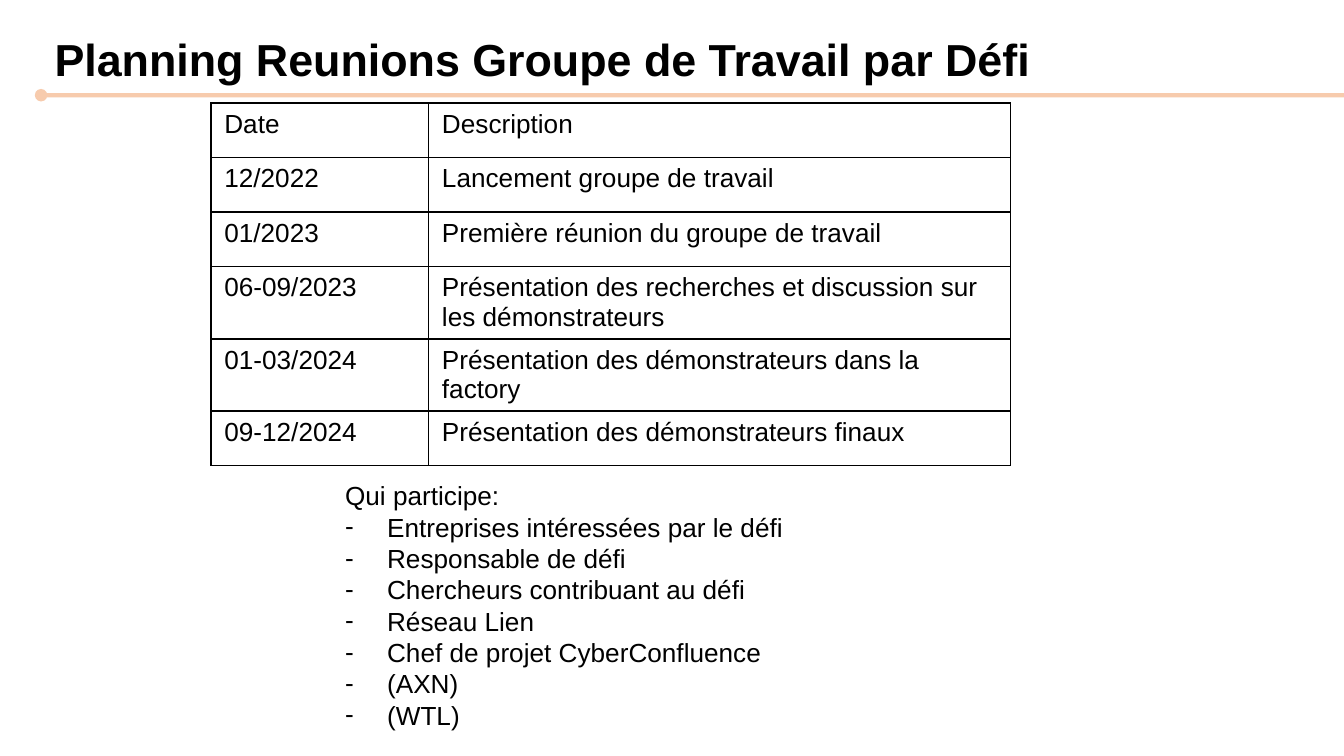
import dataclasses

import lxml.etree
import pptx
import pptx.dml.color
import pptx.enum.shapes
import pptx.enum.text
import pptx.oxml.ns
import pptx.util

Pt = pptx.util.Pt
qn = pptx.oxml.ns.qn

COLORS = {"ink": "000000", "rule": "EB7E33"}
FONT = "Arial"
BODY = 14


@dataclasses.dataclass
class Meeting:
    date: str
    text: str


MEETINGS = [
    Meeting("Date", "Description"),
    Meeting("12/2022", "Lancement groupe de travail"),
    Meeting("01/2023", "Première réunion du groupe de travail"),
    Meeting("06-09/2023", "Présentation des recherches et discussion sur les démonstrateurs"),
    Meeting("01-03/2024", "Présentation des démonstrateurs dans la factory"),
    Meeting("09-12/2024", "Présentation des démonstrateurs finaux"),
]
GUESTS = [
    "Entreprises intéressées par le défi",
    "Responsable de défi",
    "Chercheurs contribuant au défi",
    "Réseau Lien",
    "Chef de projet CyberConfluence",
    "(AXN)",
    "(WTL)",
]


def add_node(parent, tag: str, **attrs: str):
    return lxml.etree.SubElement(parent, qn(tag), attrs)


def paint(target, color: str) -> None:
    target.rgb = pptx.dml.color.RGBColor.from_string(COLORS[color])


def add_run(para, text: str, size: float = BODY, bold: bool = False) -> None:
    run = para.add_run()
    run.text = text
    run.font.name = FONT
    run.font.size = Pt(size)
    run.font.bold = bold
    paint(run.font.color, "ink")


def draw_rule(slide) -> None:
    line = slide.shapes.add_connector(
        pptx.enum.shapes.MSO_CONNECTOR.STRAIGHT, Pt(22), Pt(51), Pt(744), Pt(51))
    line.line.width = Pt(2.25)
    paint(line.line.color, "rule")
    props = line.line._get_or_add_ln()
    add_node(props.find(".//" + qn("a:srgbClr")), "a:alpha", val="40000")
    for end in ("a:headEnd", "a:tailEnd"):
        add_node(props, end, type="oval")
    add_node(line._element.spPr, "a:effectLst")


def draw_title(slide, text: str) -> None:
    title = slide.shapes.title
    title.left, title.top, title.width, title.height = Pt(22), Pt(10.8), Pt(684), Pt(36)
    frame = title.text_frame
    frame.auto_size = pptx.enum.text.MSO_AUTO_SIZE.NONE
    frame.vertical_anchor = pptx.enum.text.MSO_ANCHOR.TOP
    frame.margin_top = Pt(6)
    para = frame.paragraphs[0]
    para.alignment = pptx.enum.text.PP_ALIGN.LEFT
    add_run(para, text, 24, True)


def add_borders(cell) -> None:
    props = cell._tc.get_or_add_tcPr()
    for place, side in enumerate(("a:lnL", "a:lnR", "a:lnT", "a:lnB")):
        edge = add_node(props, side, w=str(Pt(1)))
        add_node(add_node(edge, "a:solidFill"), "a:srgbClr", val=COLORS["ink"])
        props.insert(place, edge)


def draw_table(slide, meetings: list[Meeting]) -> None:
    high = 29.2
    table = slide.shapes.add_table(
        len(meetings), 2, Pt(113), Pt(55.2), Pt(428.4), Pt(high * len(meetings))).table
    table.first_row = table.horz_banding = False
    for col, width in zip(table.columns, (116.6, 311.8)):
        col.width = Pt(width)
    for row, meeting in zip(table.rows, meetings):
        row.height = Pt(high)
        for cell, text in zip(row.cells, dataclasses.astuple(meeting)):
            cell.fill.background()
            add_borders(cell)
            add_run(cell.text_frame.paragraphs[0], text)


def draw_list(slide, head: str, items: list[str]) -> None:
    box = slide.shapes.add_textbox(Pt(177.8), Pt(253.4), Pt(250.6), Pt(143.3))
    frame = box.text_frame
    frame.word_wrap = False
    for spot, text in enumerate([head, *items]):
        para = frame.add_paragraph() if spot else frame.paragraphs[0]
        para.line_spacing = Pt(16.8)
        if spot:
            props = para._p.get_or_add_pPr()
            props.set("marL", str(Pt(22.5)))
            props.set("indent", str(-Pt(22.5)))
            add_node(add_node(props, "a:buClr"), "a:srgbClr", val=COLORS["ink"])
            add_node(props, "a:buFont", typeface=FONT)
            add_node(props, "a:buChar", char="-")
        add_run(para, text)


def main() -> None:
    deck = pptx.Presentation()
    deck.slide_width, deck.slide_height = Pt(720), Pt(405)
    slide = deck.slides.add_slide(deck.slide_layouts[5])
    draw_rule(slide)
    draw_title(slide, "Planning Reunions Groupe de Travail par Défi")
    draw_table(slide, MEETINGS)
    draw_list(slide, "Qui participe:", GUESTS)
    deck.save("out.pptx")


if __name__ == "__main__":
    main()
